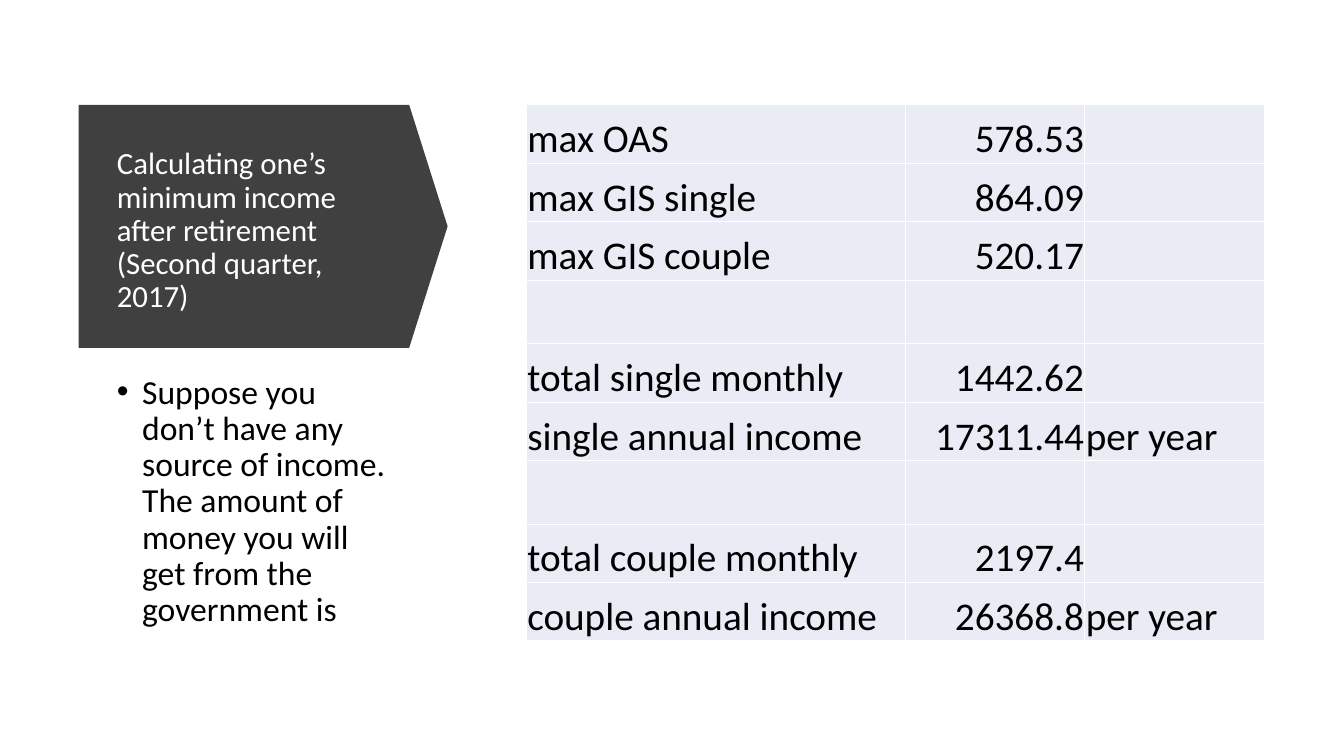
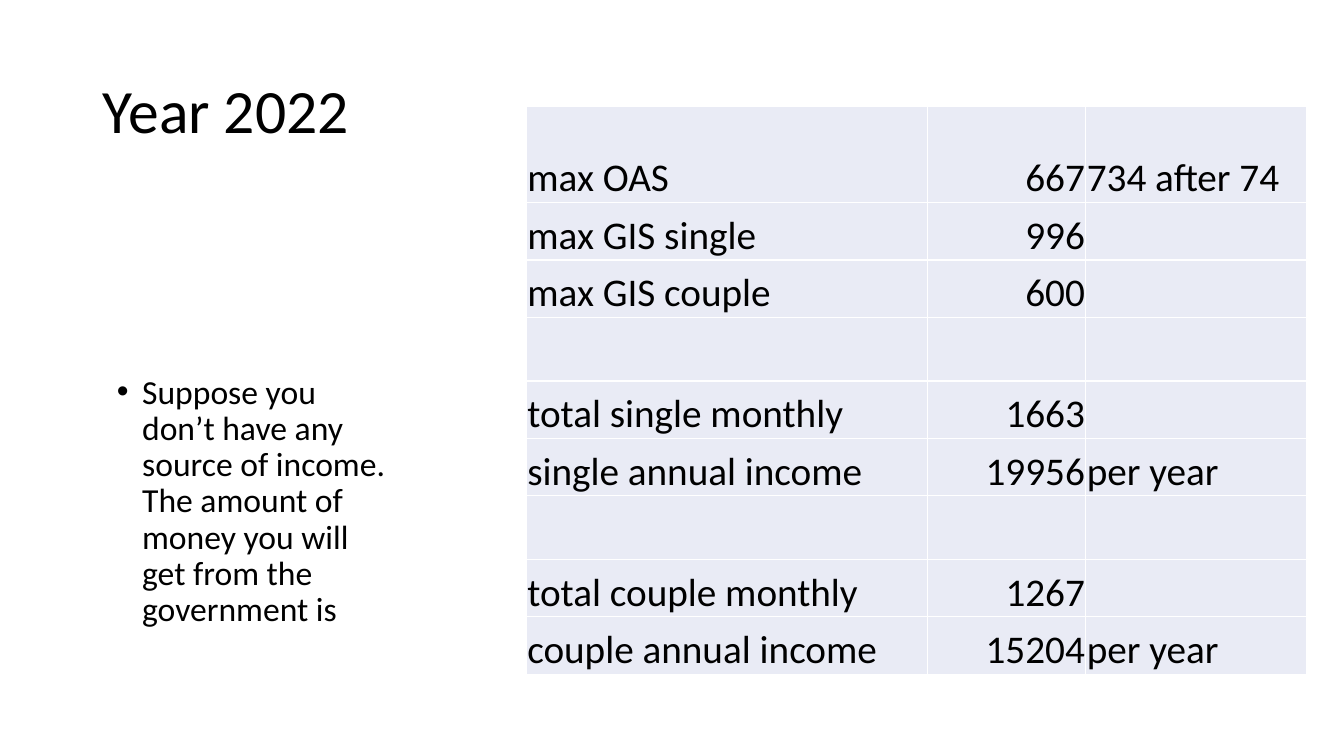
from lxml import etree
from pptx import Presentation
from pptx.dml.color import RGBColor
from pptx.enum import shapes, text
from pptx.oxml import ns
from pptx.util import Inches, Pt

FONT = "Calibri"
BLACK, WHITE, CHARCOAL, PALE_BLUE = "000000", "FFFFFF", "404040", "E9EBF5"

LEAD = ("Suppose you don’t have any source of income. "
        "The amount of money you will get from the government is")
LEAD_BOX = (1.06, 3.67, 2.92, 2.65)
BANNER_BOX = (0.78, 1.04, 3.66, 2.41)
LABELS = ("max OAS", "max GIS single", "max GIS couple", "",
          "total single monthly", "single annual income", "",
          "total couple monthly", "couple annual income")
ANNUAL_NOTES = {5: "per year", 8: "per year"}
BLANK_ROW_HEIGHT = 0.63

SLIDES = (
    dict(
        title="Calculating one’s minimum income after retirement (Second quarter, 2017)",
        title_box=(1.06, 1.33, 2.92, 1.93), title_size=22, title_color=WHITE, banner=True,
        amounts=("578.53", "864.09", "520.17", "", "1442.62", "17311.44", "",
                 "2197.4", "26368.8"),
        notes=ANNUAL_NOTES,
        table_at=(5.22, 1.04), columns=(3.76, 1.78, 1.78), first_row=0.58, row=0.58,
    ),
    dict(
        title="Year 2022",
        title_box=(0.92, 0.4, 11.5, 1.45), title_size=44, title_color=BLACK, banner=False,
        amounts=("667", "996", "600", "", "1663", "19956", "", "1267", "15204"),
        notes={0: "734 after 74", **ANNUAL_NOTES},
        table_at=(5.22, 1.06), columns=(3.98, 1.57, 2.19), first_row=0.95, row=0.57,
    ),
)


def color(value):
    return RGBColor.from_string(value)


def apply(target, values):
    for name, value in values.items():
        setattr(target, name, value)


def fill_solid(part, value):
    part.fill.solid()
    part.fill.fore_color.rgb = color(value)


def write(frame, words, size, ink=BLACK, **paragraph_format):
    """Put one formatted paragraph into a text frame and return it."""
    paragraph = frame.paragraphs[0]
    apply(paragraph, paragraph_format)
    run = paragraph.add_run()
    run.text = words
    apply(run.font, dict(name=FONT, size=Pt(size)))
    run.font.color.rgb = color(ink)
    return paragraph


def fill_placeholder(holder, box, words, size, anchor, ink=BLACK, **paragraph_format):
    apply(holder, dict(zip(("left", "top", "width", "height"), map(Inches, box))))
    apply(holder.text_frame, dict(word_wrap=True, vertical_anchor=anchor,
                                  auto_size=text.MSO_AUTO_SIZE.NONE))
    return write(holder.text_frame, words, size, ink, line_spacing=0.9,
                 alignment=text.PP_ALIGN.LEFT, **paragraph_format)


def add_banner(slide, box):
    """Place a block pointing right behind the title."""
    left, top, width, height = box
    shift = (width - height) / 2  # the arrow is turned a quarter about its centre
    banner = slide.shapes.add_shape(
        shapes.MSO_SHAPE.DOWN_ARROW, Inches(left + shift), Inches(top - shift),
        Inches(height), Inches(width))
    banner.rotation = 270
    banner.adjustments[0], banner.adjustments[1] = 1, 0.158
    banner.shadow.inherit = False
    fill_solid(banner, CHARCOAL)
    banner.line.fill.background()
    slide.shapes.title._element.addprevious(banner._element)


def add_lead(slide, box):
    paragraph = fill_placeholder(slide.placeholders[1], box, LEAD, 24,
                                 text.MSO_ANCHOR.TOP, space_before=Pt(10))
    properties = paragraph._p.get_or_add_pPr()
    properties.set("marL", str(Inches(0.25)))
    properties.set("indent", str(Inches(-0.25)))
    etree.SubElement(properties, ns.qn("a:buFont")).set("typeface", "Arial")
    etree.SubElement(properties, ns.qn("a:buChar")).set("char", "•")


def add_borders(cell):
    properties = cell._tc.get_or_add_tcPr()
    for position, side in enumerate(("lnL", "lnR", "lnT", "lnB")):
        line = etree.Element(ns.qn("a:" + side), w=str(Pt(1)))
        solid = etree.SubElement(line, ns.qn("a:solidFill"))
        etree.SubElement(solid, ns.qn("a:srgbClr")).set("val", WHITE)
        properties.insert(position, line)


def fill_cell(cell, words, alignment):
    fill_solid(cell, PALE_BLUE)
    add_borders(cell)
    if words:
        apply(cell, dict(vertical_anchor=text.MSO_ANCHOR.BOTTOM, margin_left=Inches(0.01),
                         margin_right=Inches(0.01), margin_top=Inches(0.01), margin_bottom=0))
        write(cell.text_frame, words, 28, alignment=alignment)


def add_income_table(slide, content):
    columns = content["columns"]
    heights = [content["row"] if label else BLANK_ROW_HEIGHT for label in LABELS]
    heights[0] = content["first_row"]
    left, top = content["table_at"]
    table = slide.shapes.add_table(
        len(LABELS), len(columns), Inches(left), Inches(top),
        Inches(sum(columns)), Inches(sum(heights))).table
    apply(table, dict(first_row=False, horz_banding=False))
    for column, width in zip(table.columns, columns):
        column.width = Inches(width)
    alignments = (text.PP_ALIGN.LEFT, text.PP_ALIGN.RIGHT, text.PP_ALIGN.LEFT)
    for index, (label, amount) in enumerate(zip(LABELS, content["amounts"])):
        table.rows[index].height = Inches(heights[index])
        entries = (label, amount, content["notes"].get(index, ""))
        for cell, words, alignment in zip(table.rows[index].cells, entries, alignments):
            fill_cell(cell, words, alignment)


def add_income_slide(deck, content):
    slide = deck.slides.add_slide(deck.slide_layouts[1])
    fill_placeholder(slide.shapes.title, content["title_box"], content["title"],
                     content["title_size"], text.MSO_ANCHOR.MIDDLE, content["title_color"])
    if content["banner"]:
        add_banner(slide, BANNER_BOX)
    add_lead(slide, LEAD_BOX)
    add_income_table(slide, content)


def main():
    deck = Presentation()
    apply(deck, dict(slide_width=Inches(13.33), slide_height=Inches(7.5)))
    for content in SLIDES:
        add_income_slide(deck, content)
    deck.save("out.pptx")


if __name__ == "__main__":
    main()
